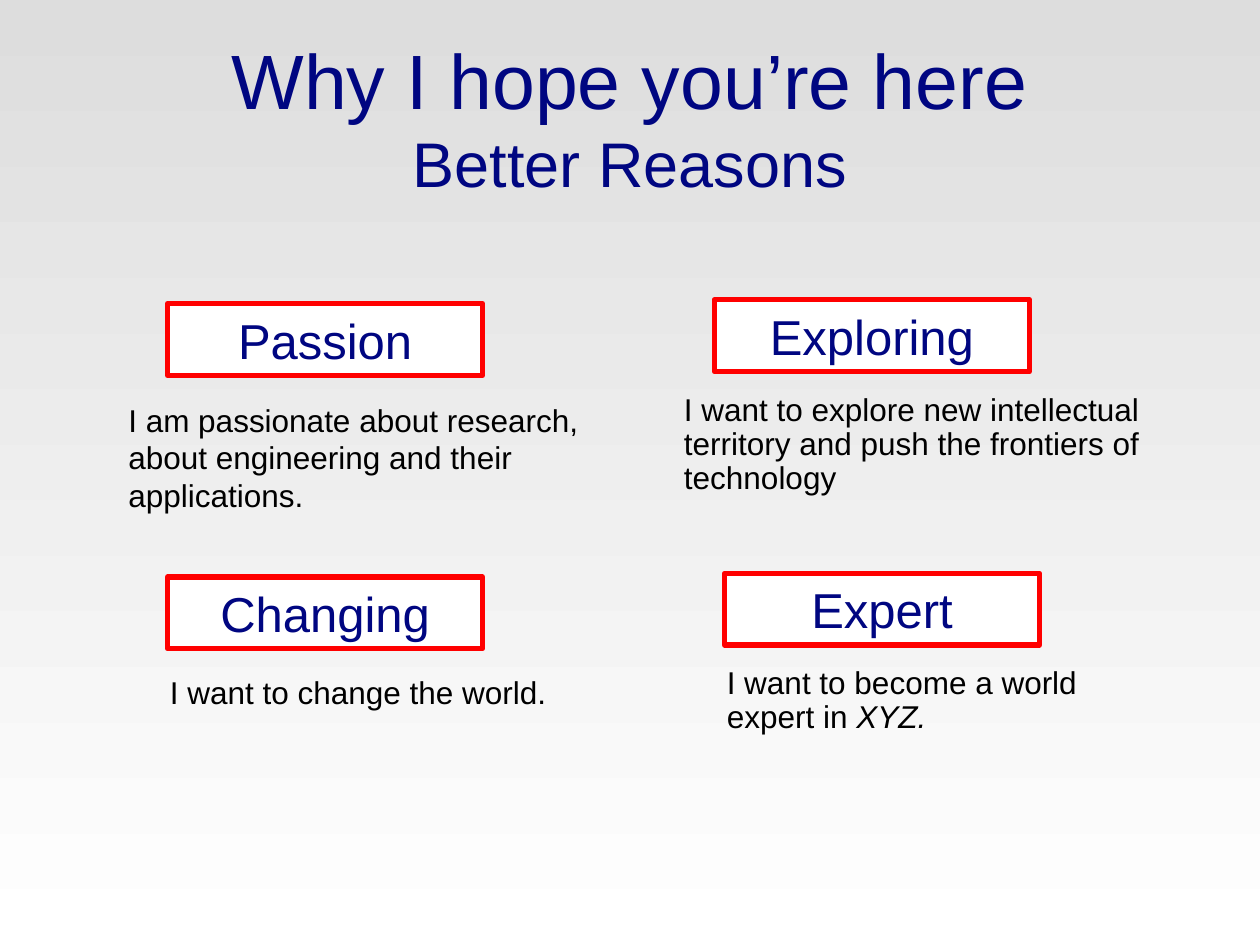
import pptx
import pptx.util
import pptx.dml.color
import pptx.enum.shapes
import pptx.enum.text

Inches = pptx.util.Inches
Pt = pptx.util.Pt

COLOURS = {
    "sky": "DDDDDD",
    "ground": "FFFFFF",
    "heading": "000681",
    "body": "000000",
    "label": "FFFFFF",
    "frame": "FF0000",
}
FONT = "Arial"
WIDTH, HEIGHT = 10, 7.5
LABEL_SIZE = (2.5, 0.57)
TITLE_LINES = [("Why I hope you’re here", 44), ("Better Reasons", 36)]

REASONS = [
    {"label": "Exploring", "label_at": (5.67, 2.38),
     "detail": [("I want to explore new intellectual territory and push "
                 "the frontiers of technology", False)],
     "detail_at": (4.83, 3.08, 4.42, 0.92), "indented": True},
    {"label": "Passion", "label_at": (1.33, 2.41),
     "detail": [("I am passionate about research, about engineering and "
                 "their applications.", False)],
     "detail_at": (0.92, 3.13, 3.92, 1.01), "indented": False},
    {"label": "Changing", "label_at": (1.33, 4.58),
     "detail": [("I want to change the world.", False)],
     "detail_at": (0.75, 5.33, 3.75, 0.37), "indented": True},
    {"label": "Expert", "label_at": (5.75, 4.55),
     "detail": [("I want to become a world expert in ", False), ("XYZ.", True)],
     "detail_at": (5.17, 5.25, 4.17, 0.65), "indented": True},
]


def rgb(part):
    return pptx.dml.color.RGBColor.from_string(COLOURS[part])


def add_run(paragraph, text, size, part, italic=False):
    run = paragraph.add_run()
    run.text = text
    run.font.name = FONT
    run.font.size = Pt(size)
    run.font.color.rgb = rgb(part)
    if italic:
        run.font.italic = True


def paint_background(slide):
    fill = slide.background.fill
    fill.gradient()
    fill.gradient_angle = 270
    for stop, part, position in zip(fill.gradient_stops, ("sky", "ground"), (0, 1)):
        stop.color.rgb = rgb(part)
        stop.position = position


def add_title(slide):
    title = slide.shapes.title
    title.left, title.top = Inches(0.05 * WIDTH), Inches(0.04 * HEIGHT)
    title.width, title.height = Inches(0.9 * WIDTH), Inches(1.25)
    frame = title.text_frame
    frame.auto_size = pptx.enum.text.MSO_AUTO_SIZE.NONE
    frame.vertical_anchor = pptx.enum.text.MSO_ANCHOR.MIDDLE
    heading = frame.paragraphs[0]
    heading.alignment = pptx.enum.text.PP_ALIGN.CENTER
    for number, (text, size) in enumerate(TITLE_LINES):
        if number:
            heading.add_line_break()
        add_run(heading, text, size, "heading")


def add_label(slide, reason):
    label = slide.shapes.add_shape(
        pptx.enum.shapes.MSO_SHAPE.RECTANGLE,
        *map(Inches, reason["label_at"] + LABEL_SIZE))
    label.shadow.inherit = False
    label.fill.solid()
    label.fill.fore_color.rgb = rgb("label")
    label.line.color.rgb = rgb("frame")
    label.line.width = Pt(3)
    frame = label.text_frame
    frame.auto_size = pptx.enum.text.MSO_AUTO_SIZE.SHAPE_TO_FIT_TEXT
    frame.vertical_anchor = pptx.enum.text.MSO_ANCHOR.MIDDLE
    frame.paragraphs[0].alignment = pptx.enum.text.PP_ALIGN.CENTER
    add_run(frame.paragraphs[0], reason["label"], 28, "heading")


def add_detail(slide, reason):
    detail = slide.shapes.add_textbox(*map(Inches, reason["detail_at"]))
    frame = detail.text_frame
    frame.word_wrap = True
    frame.auto_size = pptx.enum.text.MSO_AUTO_SIZE.SHAPE_TO_FIT_TEXT
    paragraph = frame.paragraphs[0]
    if reason["indented"]:
        paragraph.level = 1
        paragraph.line_spacing = 0.9
        properties = paragraph._p.get_or_add_pPr()
        properties.set("marL", str(Inches(0.5)))
        properties.set("indent", "0")
    for text, italic in reason["detail"]:
        add_run(paragraph, text, 18, "body", italic)


def main():
    deck = pptx.Presentation()
    deck.slide_width, deck.slide_height = Inches(WIDTH), Inches(HEIGHT)
    slide = deck.slides.add_slide(deck.slide_layouts.get_by_name("Title Only"))
    paint_background(slide)
    add_title(slide)
    for reason in REASONS:
        add_label(slide, reason)
    for reason in REASONS:
        add_detail(slide, reason)
    deck.save("out.pptx")


if __name__ == "__main__":
    main()
